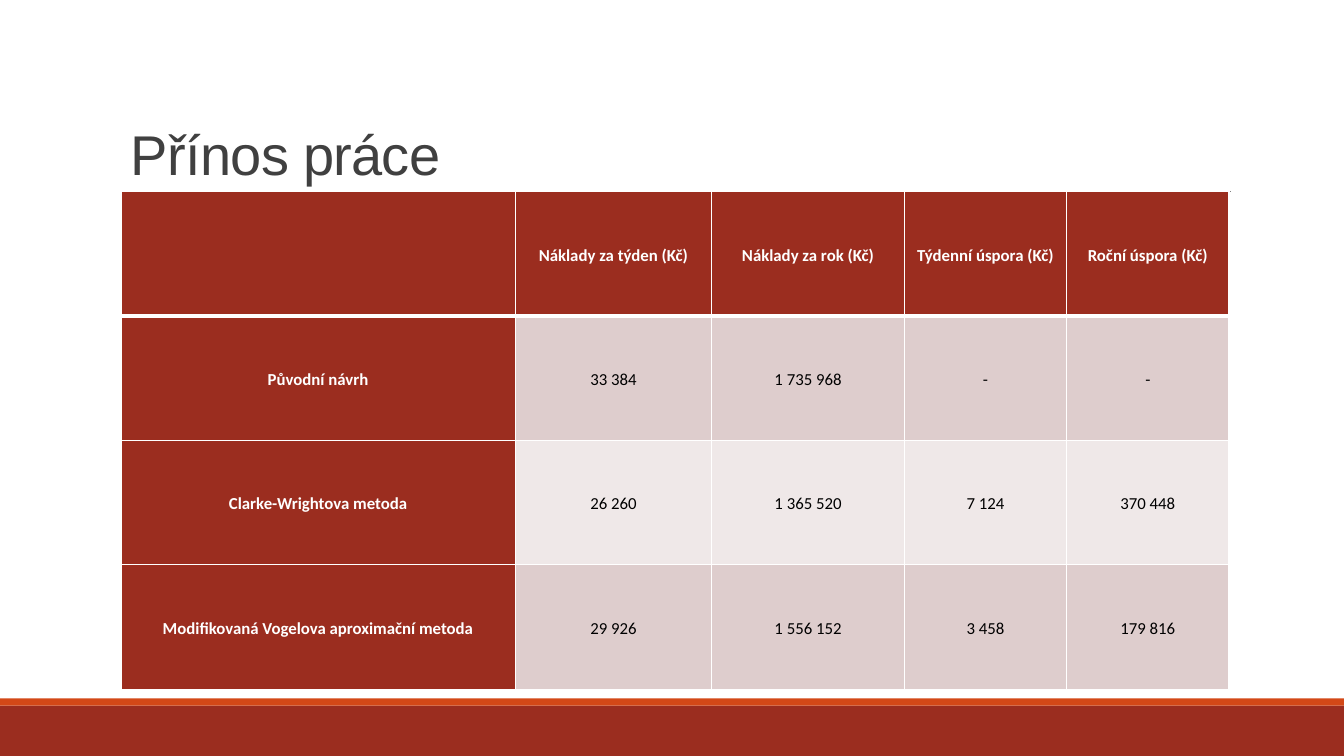
from dataclasses import dataclass

from lxml.etree import SubElement
from pptx import Presentation
from pptx.dml.color import RGBColor
from pptx.enum.shapes import MSO_CONNECTOR, MSO_SHAPE
from pptx.enum.text import MSO_ANCHOR, PP_ALIGN
from pptx.oxml.ns import qn
from pptx.util import Inches, Pt


@dataclass(frozen=True)
class Theme:
    brick: str = "9B2D1F"
    orange: str = "D34817"
    rule: str = "808080"
    title: str = "404040"
    white: str = "FFFFFF"
    black: str = "000000"
    bands: tuple = ("DECDCD", "EFE8E8")
    title_font: str = "Arial"
    body_font: str = "Calibri"
    title_size: float = 40
    body_size: float = 12


THEME = Theme()
COLUMN_WIDTHS = [3.91, 1.95, 1.91, 1.61, 1.61]
COSTS = [
    ["", "Náklady za týden (Kč)", "Náklady za rok (Kč)", "Týdenní úspora (Kč)", "Roční úspora (Kč)"],
    ["Původní návrh", "33 384", "1 735 968", "-", "-"],
    ["Clarke-Wrightova metoda", "26 260", "1 365 520", "7 124", "370 448"],
    ["Modifikovaná Vogelova aproximační metoda", "29 926", "1 556 152", "3 458", "179 816"],
]


def write(frame, text, *, font, size, color, bold=False, align=PP_ALIGN.LEFT,
          line=1.0, after=0, tracking=None):
    """Put one formatted paragraph into a text frame."""
    para = frame.paragraphs[0]
    para.alignment = align
    para.line_spacing = line
    para.space_after = Pt(after)
    span = para.add_run()
    span.text = text
    span.font.name = font
    span.font.size = Pt(size)
    span.font.bold = bold
    span.font.color.rgb = RGBColor.from_string(color)
    if tracking is not None:
        span.font._element.set("spc", str(int(tracking * 100)))


def add_band(page, box, color):
    band = page.shapes.add_shape(MSO_SHAPE.RECTANGLE, *map(Inches, box))
    band.shadow.inherit = False
    band.fill.solid()
    band.fill.fore_color.rgb = RGBColor.from_string(color)
    band.line.fill.background()


def add_footer(page, box):
    """Brick bar with a thin orange strip on its top edge."""
    left, top, width, height = box
    strip = 0.07
    add_band(page, (left, top + strip, width, height - strip), THEME.brick)
    add_band(page, (left, top, width, strip), THEME.orange)


def add_title(page, box, text):
    """Title resting on a thin rule at the bottom of its box."""
    left, top, width, height = box
    bottom = Inches(top + height)
    rule = page.shapes.add_connector(
        MSO_CONNECTOR.STRAIGHT, Inches(left + 0.11), bottom, Inches(left + width + 0.01), bottom)
    rule.line.color.rgb = RGBColor.from_string(THEME.rule)
    rule.line.width = Pt(0.5)
    SubElement(rule._element.spPr, qn("a:effectLst"))

    frame = page.shapes.add_textbox(*map(Inches, box)).text_frame
    frame.word_wrap = True
    frame.vertical_anchor = MSO_ANCHOR.BOTTOM
    write(frame, text, font=THEME.title_font, size=THEME.title_size,
          color=THEME.title, line=0.85, tracking=-0.5)


def set_borders(cell, **widths):
    """Draw white cell borders; widths in points, in the order L, R, T, B."""
    properties = cell._tc.get_or_add_tcPr()
    for side, width in widths.items():
        border = SubElement(properties, qn(f"a:ln{side}"), w=str(Pt(width)))
        fill = SubElement(border, qn("a:solidFill"))
        SubElement(fill, qn("a:srgbClr"), val=THEME.white)


def add_cost_table(page, box, rows, widths):
    table = page.shapes.add_table(len(rows), len(widths), *map(Inches, box)).table
    for column, width in zip(table.columns, widths):
        column.width = Inches(width)
    for r, values in enumerate(rows):
        table.rows[r].height = Inches(box[3] / len(rows))
        for c, value in enumerate(values):
            cell = table.cell(r, c)
            is_heading = r == 0 or c == 0
            # A thick line parts the header row from the body
            set_borders(cell, L=1, R=1, T=3 if r == 1 else 1, B=3 if r == 0 else 1)
            cell.fill.solid()
            cell.fill.fore_color.rgb = RGBColor.from_string(
                THEME.brick if is_heading else THEME.bands[(r - 1) % 2])
            cell.vertical_anchor = MSO_ANCHOR.MIDDLE
            cell.margin_left = cell.margin_right = Inches(0.07)
            cell.margin_top = cell.margin_bottom = 0
            if value:
                write(cell.text_frame, value, font=THEME.body_font, size=THEME.body_size,
                      color=THEME.white if is_heading else THEME.black, bold=is_heading,
                      align=PP_ALIGN.CENTER, line=1.15, after=10)


def main():
    deck = Presentation()
    deck.slide_width, deck.slide_height = Inches(13.33), Inches(7.5)
    page = deck.slides.add_slide(deck.slide_layouts[6])
    add_footer(page, (0, 6.93, 13.33, 0.57))
    add_title(page, (1.2, 0.31, 11, 1.59), "Přínos práce")
    add_cost_table(page, (1.2, 1.9, 11, 4.94), COSTS, COLUMN_WIDTHS)
    deck.save("out.pptx")


if __name__ == "__main__":
    main()
